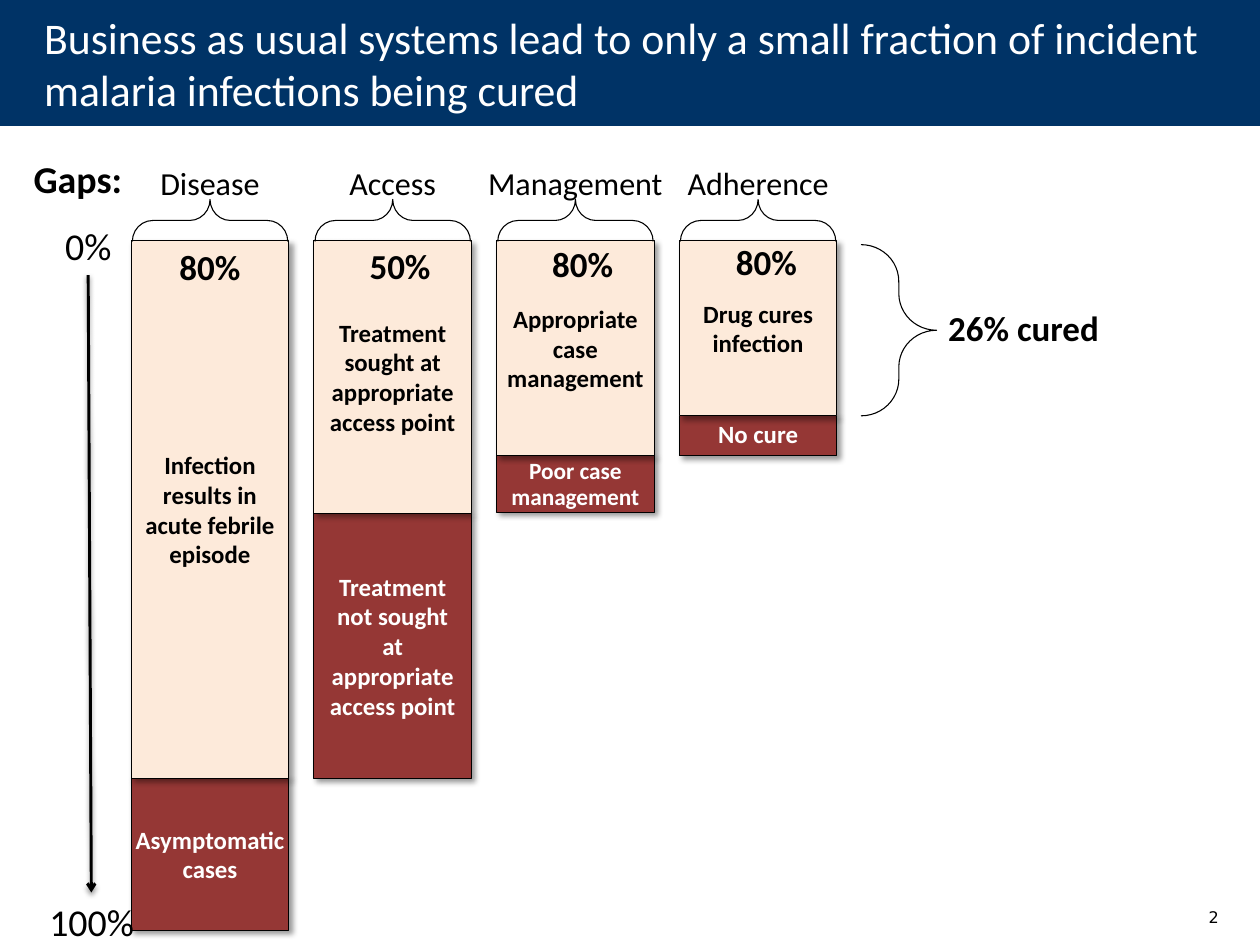
import pptx
import pptx.util
import pptx.dml.color
import pptx.enum.shapes
import pptx.enum.text
import pptx.oxml
import pptx.oxml.ns

Inches, Pt = pptx.util.Inches, pptx.util.Pt
RGB = pptx.dml.color.RGBColor.from_string
SHAPES = pptx.enum.shapes.MSO_SHAPE
ALIGN = pptx.enum.text.PP_ALIGN
ANCHOR = pptx.enum.text.MSO_ANCHOR

COLORS = {"navy": "003366", "kept": "FDEADA", "lost": "953735",
          "black": "000000", "white": "FFFFFF"}
FIRST_LEFT, COLUMN_STEP, COLUMN_WIDTH, BAR_TOP = 1.25, 1.74, 1.5, 2.29
BRACE_DEPTH, BRACE_SPAN = 0.4, 1.48


def write(shape, text, size=24, color="black", bold=False, font="Calibri",
          align=ALIGN.LEFT, anchor=ANCHOR.TOP, margins=(0.12, 0.06),
          wrap=True, spacing=None):
    """Put one formatted paragraph in the shape; margins are (side, top/bottom)."""
    frame = shape.text_frame
    frame.auto_size = pptx.enum.text.MSO_AUTO_SIZE.NONE
    frame.word_wrap = wrap
    frame.vertical_anchor = anchor
    frame.margin_left = frame.margin_right = Inches(margins[0])
    frame.margin_top = frame.margin_bottom = Inches(margins[1])
    paragraph = frame.paragraphs[0]
    paragraph.alignment = align
    if spacing:
        paragraph.line_spacing = Pt(spacing)
    run = paragraph.add_run()
    run.text = text
    run.font.name = font
    run.font.size = Pt(size)
    run.font.bold = bold
    run.font.color.rgb = RGB(COLORS[color])
    return paragraph


def cast_shadow(shape, blur, distance, degrees, opacity):
    """Add an outer black shadow, replacing any effect list already there."""
    properties = shape._element.spPr
    for effects in properties.findall(pptx.oxml.ns.qn("a:effectLst")):
        properties.remove(effects)
    properties.append(pptx.oxml.parse_xml(
        f'<a:effectLst {pptx.oxml.ns.nsdecls("a")}>'
        f'<a:outerShdw blurRad="{Pt(blur)}" dist="{Pt(distance)}" '
        f'dir="{degrees * 60000}" algn="tl" rotWithShape="0">'
        f'<a:srgbClr val="{COLORS["black"]}"><a:alpha val="{opacity * 1000}"/>'
        '</a:srgbClr></a:outerShdw></a:effectLst>'))


presentation = pptx.Presentation()
presentation.slide_width, presentation.slide_height = Inches(12), Inches(9)
slide = presentation.slides.add_slide(presentation.slide_layouts[5])
shapes = slide.shapes

# Title band
title = shapes.title
title.left, title.top = 0, 0
title.width, title.height = presentation.slide_width, Inches(1.2)
title.fill.solid()
title.fill.fore_color.rgb = RGB(COLORS["navy"])
paragraph = write(
    title, "Business as usual systems lead to only a small fraction of incident "
    "malaria infections being cured", size=30, color="white",
    anchor=ANCHOR.MIDDLE, margins=(0.14, 0.07))
paragraph._p.get_or_add_pPr().set("marL", str(Inches(0.28)))

# Each bar has a kept part on top and a lost part below: (text, height, format)
bars = [
    ("Disease", "80%", (0.75, 2.28),
     ("Infection results in acute febrile episode", 5.12, {}),
     ("Asymptomatic cases", 1.45, {"margins": (0, 0)})),
    ("Access", "50%", (0.82, 2.27),
     ("Treatment sought at appropriate access point", 2.6, {}),
     ("Treatment not sought at appropriate access point", 2.52, {})),
    ("Management", "80%", (0.82, 2.25),
     ("Appropriate case management", 2.05, {"margins": (0.06, 0.06)}),
     ("Poor case management", 0.54, {"size": 16, "spacing": 18})),
    ("Adherence", "80%", (0.83, 2.23),
     ("Drug cures infection", 1.67, {}),
     ("No cure", 0.38, {"spacing": 18})),
]
braces = [(8.2, 2.33, 0.72, 1.63, 180)]
labels = [
    ("Gaps:", 0.2, 1.42, 1.1, 0.56, {"size": 26, "bold": True}),
    ("0%", 0.5, 2.06, 0.69, 0.56, {"size": 26}),
    ("100%", 0.35, 8.5, 1.06, 0.56, {"size": 26}),
    ("26% cured", 8.91, 2.86, 1.69, 0.53, {"bold": True}),
    ("2", 8.95, 8.27, 2.8, 0.63,
     {"size": 11, "font": "DejaVu Sans", "align": ALIGN.RIGHT,
      "anchor": ANCHOR.BOTTOM, "margins": (0.14, 0.07)}),
]
for column, (heading, share, (share_center, share_top), kept, lost) in enumerate(bars):
    left = FIRST_LEFT + column * COLUMN_STEP
    center = left + COLUMN_WIDTH / 2
    parts = [("lost", "white", BAR_TOP + kept[1], lost),
             ("kept", "black", BAR_TOP, kept)]
    for fill, text_color, top, (text, height, text_format) in parts:
        bar = shapes.add_shape(SHAPES.FLOWCHART_PROCESS, Inches(left), Inches(top),
                               Inches(COLUMN_WIDTH), Inches(height))
        bar.fill.solid()
        bar.fill.fore_color.rgb = RGB(COLORS[fill])
        bar.line.color.rgb = RGB(COLORS["black"])
        bar.line.width = Pt(0.75)
        cast_shadow(bar, blur=4, distance=3, degrees=45, opacity=40)
        write(bar, text, **{"size": 17, "bold": True, "color": text_color,
                            "align": ALIGN.CENTER, "anchor": ANCHOR.MIDDLE,
                            **text_format})
    # A quarter turn about the centre lays the brace across the bar
    braces.append((center - BRACE_DEPTH / 2, 2.1 - BRACE_SPAN / 2,
                   BRACE_DEPTH, BRACE_SPAN, 90))
    labels.append((heading, center - 0.95, 1.42, 1.9, 0.56,
                   {"size": 22, "align": ALIGN.CENTER, "anchor": ANCHOR.BOTTOM}))
    labels.append((share, left + share_center - 0.42, share_top, 0.84, 0.53,
                   {"bold": True, "align": ALIGN.CENTER}))

for left, top, width, height, rotation in braces:
    brace = shapes.add_shape(SHAPES.LEFT_BRACE, Inches(left), Inches(top),
                             Inches(width), Inches(height))
    brace.rotation = rotation
    brace.adjustments[0] = 0.486
    brace.fill.background()
    brace.line.color.rgb = RGB(COLORS["black"])
    brace.line.width = Pt(0.75)
    brace.shadow.inherit = False

for text, left, top, width, height, text_format in labels:
    label = shapes.add_textbox(Inches(left), Inches(top), Inches(width), Inches(height))
    write(label, text, wrap=False, **text_format)

# Scale arrow from 0% to 100%
arrow = shapes.add_connector(pptx.enum.shapes.MSO_CONNECTOR.STRAIGHT,
                             Inches(0.84), Inches(2.62), Inches(0.87), Inches(8.5))
arrow.line.color.rgb = RGB(COLORS["black"])
arrow.line.width = Pt(2)
arrow.line._get_or_add_ln().append(pptx.oxml.parse_xml(
    f'<a:tailEnd {pptx.oxml.ns.nsdecls("a")} type="arrow"/>'))
cast_shadow(arrow, blur=3.1, distance=1.6, degrees=90, opacity=38)

presentation.save("out.pptx")
